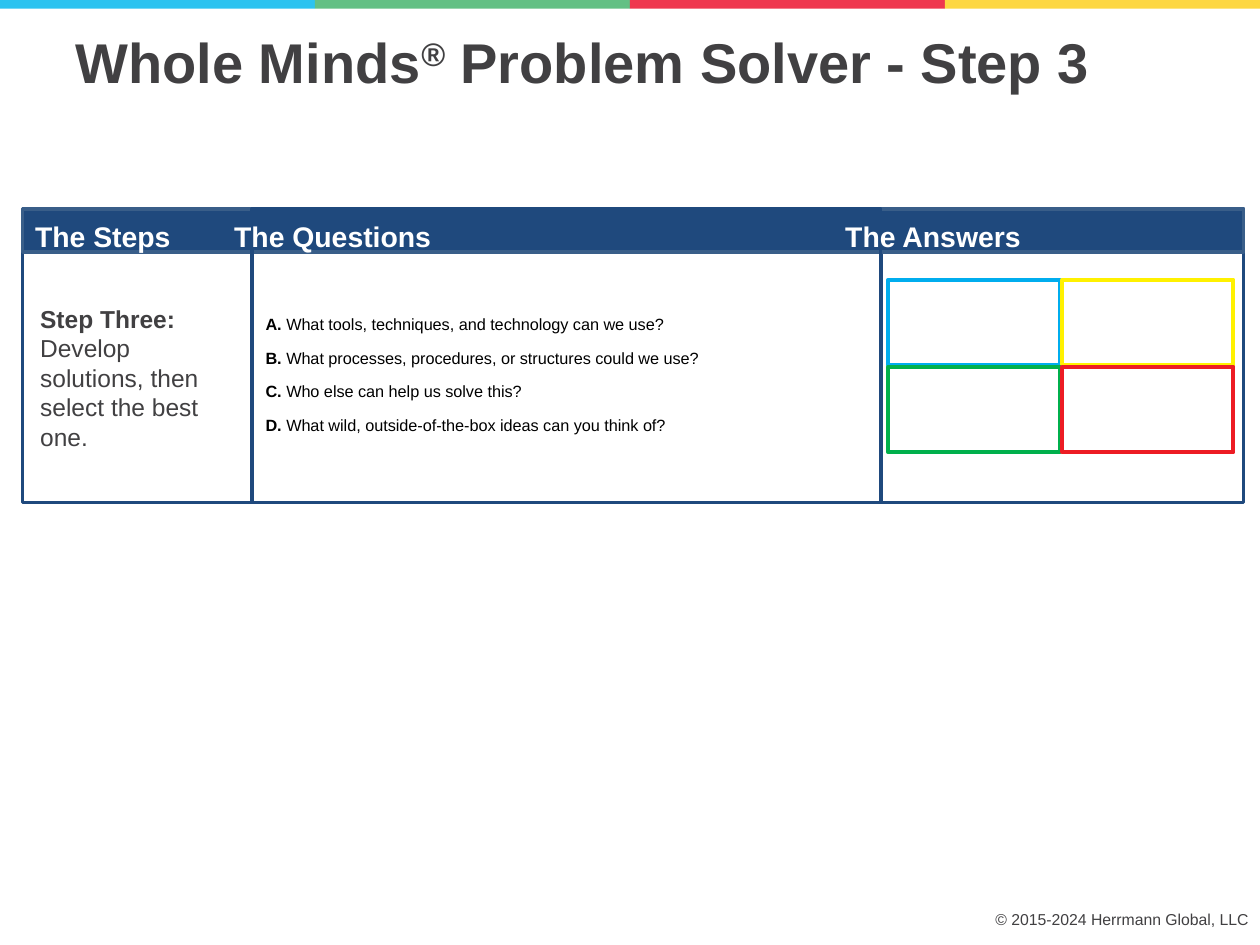
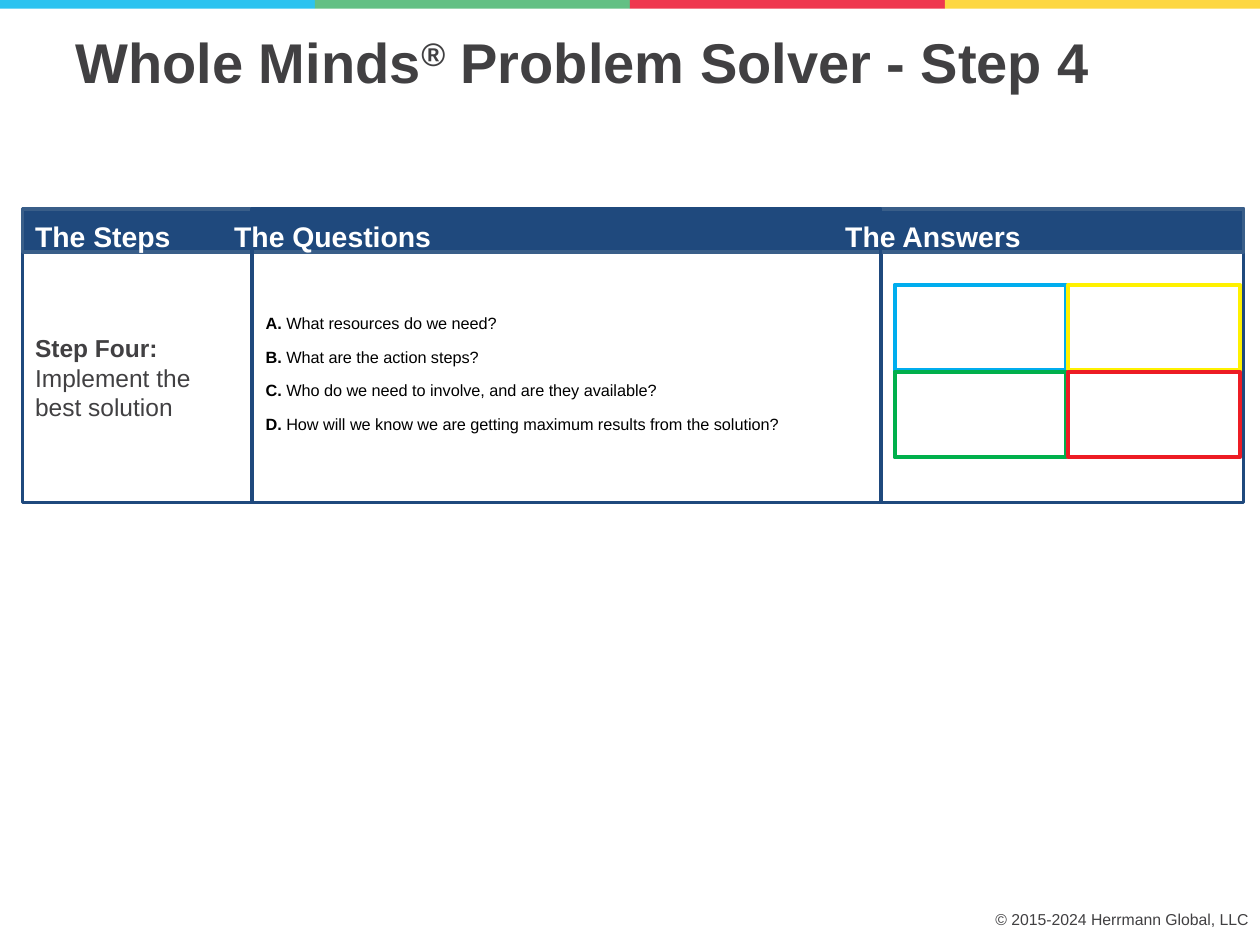
from dataclasses import dataclass

from lxml import etree
from pptx import Presentation
from pptx.dml.color import RGBColor
from pptx.enum import shapes, text
from pptx.oxml import ns
from pptx.util import Inches, Pt


@dataclass(frozen=True)
class Theme:
    font: str = "Arial"
    ink: str = "414042"
    black: str = "000000"
    white: str = "FFFFFF"
    navy: str = "1F497D"
    header_edge: str = "395E89"
    band: tuple = ("2CC3F0", "63C084", "EF374F", "FDD742")
    quadrants: tuple = ("00ADEE", "FFF100", "00B04C", "ED1C24")
    title_size: float = 32
    header_size: float = 28
    question_size: float = 16
    step_size: float = 14
    footer_size: float = 9
    raised: int = 30000


T = Theme()
SLIDE_W, SLIDE_H = 10, 7.5
PANEL = (0.18, 1.66, 9.69, 2.33)
COLUMNS = (1.82, 4.99, 2.88)
HEADER_H = 0.34
HEADER_TABS = (1.58, 6.43)
HEADINGS = "The Steps\tThe Questions\tThe Answers"

STEPS = [
    dict(
        number=3, name="Step Three:",
        action="Develop solutions, then select the best one.",
        questions=["What tools, techniques, and technology can we use?",
                   "What processes, procedures, or structures could we use?",
                   "Who else can help us solve this?",
                   "What wild, outside-of-the-box ideas can you think of?"],
        step_box=(0.22, 2, 1.75, 1.99),
        question_box=(2.01, 2.42, 4.97, 1.18),
        answer_box=(7.05, 2.22, 2.74, 1.37)),
    dict(
        number=4, name="Step Four:",
        action="Implement the best solution",
        questions=["What resources do we need?",
                   "What are the action steps?",
                   "Who do we need to involve, and are they available?",
                   "How will we know we are getting maximum results from the solution?"],
        step_box=(0.18, 2, 1.73, 1.99),
        question_box=(2.01, 2.41, 5.15, 1.18),
        answer_box=(7.1, 2.26, 2.74, 1.37)),
]


def inches(box):
    return [Inches(v) for v in box]


def add_rect(parent, box, fill=None, line=None, width=2):
    sp = parent.add_shape(shapes.MSO_SHAPE.RECTANGLE, *inches(box))
    sp.shadow.inherit = False
    if fill:
        sp.fill.solid()
        sp.fill.fore_color.rgb = RGBColor.from_string(fill)
    else:
        sp.fill.background()
    if line:
        sp.line.color.rgb = RGBColor.from_string(line)
        sp.line.width = Pt(width)
    else:
        sp.line.fill.background()
    return sp


def set_frame(tf, anchor=text.MSO_ANCHOR.TOP, margins=(0.1, 0.05)):
    tf.word_wrap = True
    tf.auto_size = text.MSO_AUTO_SIZE.NONE
    tf.vertical_anchor = anchor
    tf.margin_left = tf.margin_right = Inches(margins[0])
    tf.margin_top = tf.margin_bottom = Inches(margins[1])
    return tf


def add_text_frame(slide, box, **frame):
    return set_frame(slide.shapes.add_textbox(*inches(box)).text_frame, **frame)


def add_run(p, words, size, color=T.ink, bold=False, raised=False):
    r = p.add_run()
    r.text = words
    r.font.name = T.font
    r.font.size = Pt(size)
    r.font.bold = bold
    r.font.color.rgb = RGBColor.from_string(color)
    if raised:
        r.font._element.set("baseline", str(T.raised))


def add_tabs(p, positions):
    tabs = etree.SubElement(p._p.get_or_add_pPr(), ns.qn("a:tabLst"))
    for position in positions:
        etree.SubElement(tabs, ns.qn("a:tab"), pos=str(Inches(position)), algn="l")


def add_frame_parts(slide):
    # Colour band across the top
    w = SLIDE_W / len(T.band)
    for i, color in enumerate(T.band):
        add_rect(slide.shapes, (i * w, 0, w, 0.07), color)
    # Copyright line
    tf = add_text_frame(slide, (7.61, 7.18, 2.39, 0.24), margins=(0.09, 0.04))
    p = tf.paragraphs[0]
    p.alignment = text.PP_ALIGN.RIGHT
    add_run(p, "© 2015-2024 Herrmann Global, LLC", T.footer_size)


def add_title(slide, number):
    sp = slide.shapes.title
    sp.left, sp.top, sp.width, sp.height = inches((0.5, 0.17, 9, 0.93))
    p = set_frame(sp.text_frame).paragraphs[0]
    p.alignment = text.PP_ALIGN.LEFT
    add_run(p, "Whole Minds", T.title_size, bold=True)
    add_run(p, "®", T.title_size, bold=True, raised=True)
    add_run(p, f" Problem Solver - Step {number}", T.title_size, bold=True)


def add_panel(slide, box):
    x, y, w, h = box
    steps_w, questions_w, answers_w = COLUMNS
    questions_x = x + steps_w
    answers_x = questions_x + questions_w
    add_rect(slide.shapes, (x, y, steps_w, h), T.white, T.navy)
    add_rect(slide.shapes, (answers_x, y, answers_w, h), T.white, T.navy)
    add_rect(slide.shapes, (x, y, w, HEADER_H), T.navy, T.header_edge)
    add_rect(slide.shapes, (questions_x, y, questions_w, h), line=T.navy)


def add_headings(slide, box):
    x, y, w, _ = box
    p = add_text_frame(slide, (x, y - 0.02, w, 0.57)).paragraphs[0]
    add_tabs(p, HEADER_TABS)
    add_run(p, HEADINGS, T.header_size, T.white, bold=True, raised=True)


def add_step(slide, box, name, action):
    p = add_text_frame(slide, box, anchor=text.MSO_ANCHOR.MIDDLE).paragraphs[0]
    add_run(p, name, T.step_size, bold=True)
    p.add_line_break()
    add_run(p, action, T.step_size)


def add_questions(slide, box, questions):
    tf = add_text_frame(slide, box)
    for i, (letter, question) in enumerate(zip("ABCD", questions)):
        p = tf.add_paragraph() if i else tf.paragraphs[0]
        add_run(p, f"{letter}. ", T.question_size, T.black, bold=True, raised=True)
        add_run(p, question, T.question_size, T.black, raised=True)


def add_answers(slide, box):
    x, y, w, h = box
    cell_w, cell_h = 1.36, 0.68
    group = slide.shapes.add_group_shape()
    for i, color in enumerate(T.quadrants):
        row, col = divmod(i, 2)
        cell = (x + col * (w - cell_w), y + row * (h - cell_h), cell_w, cell_h)
        add_rect(group.shapes, cell, T.white, color, 2.25)


def add_step_slide(prs, step):
    slide = prs.slides.add_slide(prs.slide_layouts[5])
    add_frame_parts(slide)
    add_title(slide, step["number"])
    add_panel(slide, PANEL)
    add_step(slide, step["step_box"], step["name"], step["action"])
    add_questions(slide, step["question_box"], step["questions"])
    add_answers(slide, step["answer_box"])
    add_headings(slide, PANEL)


def main():
    prs = Presentation()
    prs.slide_width, prs.slide_height = Inches(SLIDE_W), Inches(SLIDE_H)
    for step in STEPS:
        add_step_slide(prs, step)
    prs.save("out.pptx")


if __name__ == "__main__":
    main()
